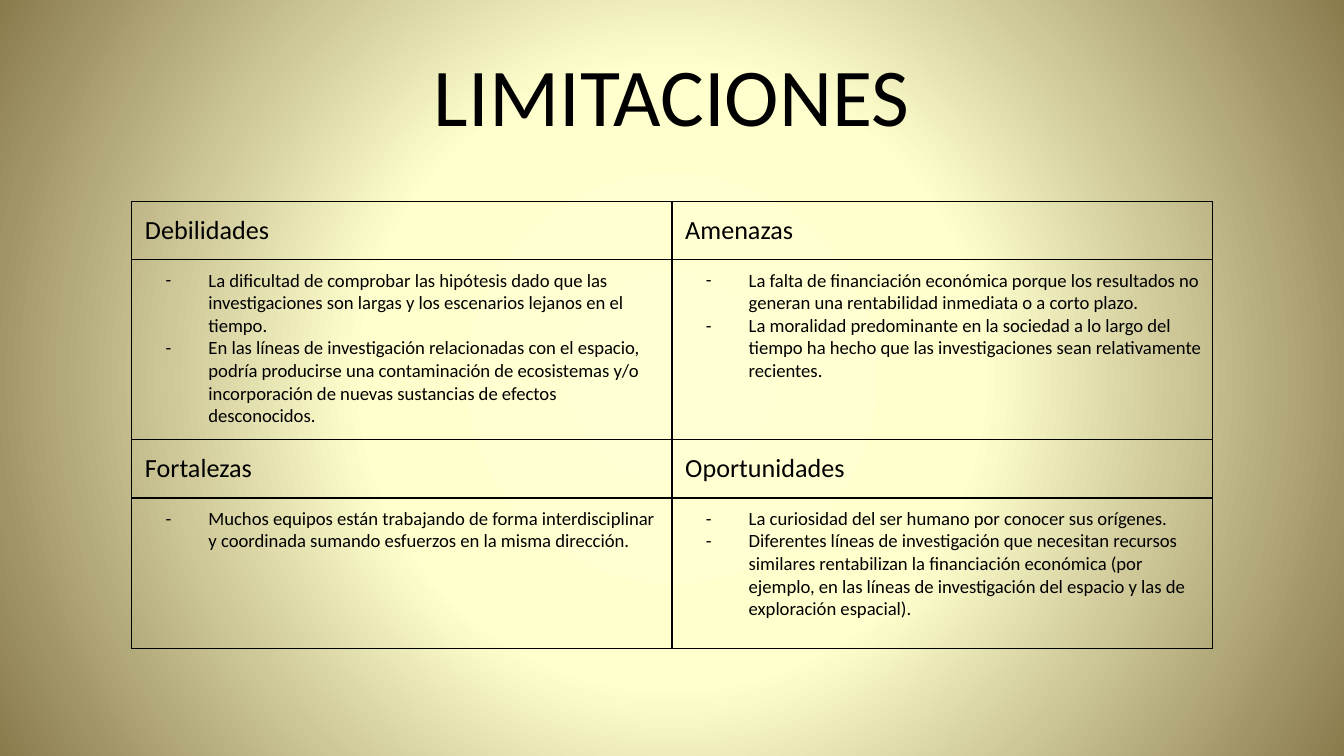
from lxml import etree
from pptx import Presentation
from pptx.dml.color import RGBColor
from pptx.enum.text import MSO_ANCHOR, PP_ALIGN
from pptx.oxml import parse_xml
from pptx.oxml.ns import nsdecls, qn
from pptx.util import Cm, Pt

BLACK = RGBColor(0x00, 0x00, 0x00)
IVORY = RGBColor(0xFF, 0xFF, 0xD4)
CREAM = RGBColor(0xFF, 0xFF, 0xCE)
OLIVE = RGBColor(0x8A, 0x7B, 0x4D)
FONT = "Calibri"
CENTER = PP_ALIGN.CENTER
MIDDLE = MSO_ANCHOR.MIDDLE

# Each pair of rows: headings, then their lists
GRID = [
    ["Debilidades", "Amenazas"],
    [
        ["La dificultad de comprobar las hipótesis dado que las investigaciones son largas "
         "y los escenarios lejanos en el tiempo.",
         "En las líneas de investigación relacionadas con el espacio, podría producirse una "
         "contaminación de ecosistemas y/o incorporación de nuevas sustancias de efectos "
         "desconocidos."],
        ["La falta de financiación económica porque los resultados no generan una "
         "rentabilidad inmediata o a corto plazo.",
         "La moralidad predominante en la sociedad a lo largo del tiempo ha hecho que las "
         "investigaciones sean relativamente recientes."],
    ],
    ["Fortalezas", "Oportunidades"],
    [
        ["Muchos equipos están trabajando de forma interdisciplinar y coordinada sumando "
         "esfuerzos en la misma dirección."],
        ["La curiosidad del ser humano por conocer sus orígenes.",
         "Diferentes líneas de investigación que necesitan recursos similares rentabilizan "
         "la financiación económica (por ejemplo, en las líneas de investigación del "
         "espacio y las de exploración espacial)."],
    ],
]
ROWS = [Cm(0.74), Cm(3.4), Cm(0.74), Cm(2.84)]
COL = Cm(10.21)


def style(para, size):
    para.font.name = FONT
    para.font.size = Pt(size)
    para.font.color.rgb = BLACK


def dash(para):
    """Give the paragraph a hanging dash as its bullet."""
    props = para._p.get_or_add_pPr()
    props.set("marL", str(Cm(1.27)))
    props.set("indent", str(-Cm(0.81)))
    tint = etree.SubElement(props, qn("a:buClr"))
    etree.SubElement(tint, qn("a:srgbClr"), val=str(BLACK))
    etree.SubElement(props, qn("a:buFont"), typeface=FONT)
    etree.SubElement(props, qn("a:buChar"), char="-")


prs = Presentation()
prs.slide_width = Cm(25.4)
prs.slide_height = Cm(14.29)
slide = prs.slides.add_slide(prs.slide_layouts[5])

# Radial background
stops = "".join(
    f'<a:gs pos="{pos * 1000}"><a:srgbClr val="{color}"/></a:gs>'
    for pos, color in [(0, IVORY), (40, CREAM), (100, OLIVE)]
)
back = parse_xml(
    f'<p:bg {nsdecls("p", "a")}><p:bgPr><a:gradFill><a:gsLst>{stops}</a:gsLst>'
    '<a:path path="circle"><a:fillToRect l="50000" t="50000" r="50000" b="50000"/></a:path>'
    "</a:gradFill><a:effectLst/></p:bgPr></p:bg>"
)
slide.element.cSld.insert(0, back)

# Title
title = slide.shapes.title
title.left, title.top, title.width, title.height = Cm(1.27), Cm(0.58), Cm(22.86), Cm(2.39)
title.text_frame.text = "LIMITACIONES"
title.text_frame.vertical_anchor = MIDDLE
head = title.text_frame.paragraphs[0]
head.alignment = CENTER
style(head, 44)

# Table
frame = slide.shapes.add_table(len(ROWS), 2, Cm(2.49), Cm(3.81), 2 * COL, sum(ROWS))
table = frame.table
table.first_row = False
table.horz_banding = False
for col in table.columns:
    col.width = COL
for row, height in zip(table.rows, ROWS):
    row.height = height

for r, line in enumerate(GRID):
    for c, entry in enumerate(line):
        cell = table.cell(r, c)
        listed = isinstance(entry, list)
        pad = Cm(0.18) if listed else Cm(0.25)
        cell.margin_left = cell.margin_right = pad
        cell.margin_top = cell.margin_bottom = pad
        props = cell._tc.get_or_add_tcPr()
        for side in ("lnL", "lnR", "lnT", "lnB"):
            edge = etree.SubElement(props, qn(f"a:{side}"), w=str(Pt(0.75)))
            fill = etree.SubElement(edge, qn("a:solidFill"))
            etree.SubElement(fill, qn("a:srgbClr"), val=str(BLACK))
        cell.fill.background()
        cell.text_frame.text = "\n".join(entry) if listed else entry
        for para in cell.text_frame.paragraphs:
            if listed:
                dash(para)
            style(para, 10 if listed else 14)

prs.save("out.pptx")
